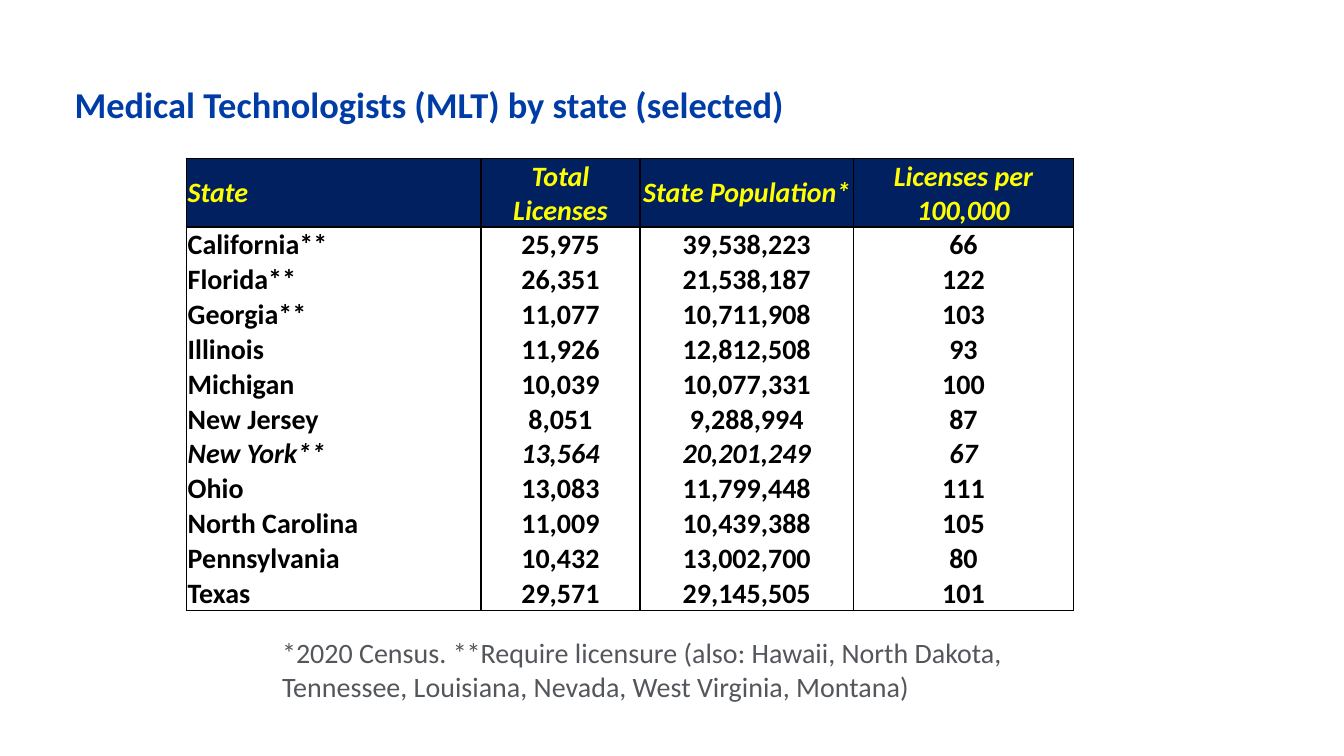
from dataclasses import dataclass

from lxml import etree
from pptx import Presentation
from pptx import util as u
from pptx.dml.color import RGBColor
from pptx.enum import text
from pptx.oxml import ns

COLORS = {
    "title": "003CA5",
    "note": "53565A",
    "header_fill": "002060",
    "header_text": "FFFF00",
    "body_fill": "FFFFFF",
    "body_text": "000000",
    "border": "000000",
}
FONT = "Calibri"
COLUMN_WIDTHS = (7.42, 4.01, 5.38, 5.54)
HEADER_HEIGHT = 1.73
BODY_HEIGHT = 0.87
FRAME_FORMAT = {"margin_left": 0, "margin_top": 0, "margin_right": 0, "margin_bottom": 0,
                "word_wrap": True, "auto_size": text.MSO_AUTO_SIZE.NONE,
                "vertical_anchor": text.MSO_ANCHOR.TOP}
CELL_FORMAT = {"margin_left": u.Cm(0.03), "margin_top": u.Cm(0.03), "margin_right": u.Cm(0.03),
               "margin_bottom": 0, "vertical_anchor": text.MSO_ANCHOR.MIDDLE}


@dataclass(frozen=True)
class StateRow:
    state: str
    licenses: str
    population: str
    rate: str
    italic: bool = False

    def values(self) -> tuple[str, ...]:
        return self.state, self.licenses, self.population, self.rate


HEADER = StateRow("State", "Total Licenses", "State Population*", "Licenses per 100,000", True)
STATES = [
    StateRow("California**", "25,975", "39,538,223", "66"),
    StateRow("Florida**", "26,351", "21,538,187", "122"),
    StateRow("Georgia**", "11,077", "10,711,908", "103"),
    StateRow("Illinois", "11,926", "12,812,508", "93"),
    StateRow("Michigan", "10,039", "10,077,331", "100"),
    StateRow("New Jersey", "8,051", "9,288,994", "87"),
    StateRow("New York**", "13,564", "20,201,249", "67", True),
    StateRow("Ohio", "13,083", "11,799,448", "111"),
    StateRow("North Carolina", "11,009", "10,439,388", "105"),
    StateRow("Pennsylvania", "10,432", "13,002,700", "80"),
    StateRow("Texas", "29,571", "29,145,505", "101"),
]


def apply_format(target, values: dict) -> None:
    for name, value in values.items():
        setattr(target, name, value)


def write(frame, words: str, color: str, size: float, bold: bool = False,
          italic: bool = False, align=text.PP_ALIGN.LEFT) -> None:
    para = frame.paragraphs[0]
    para.alignment = align
    span = para.add_run()
    span.text = words
    apply_format(span.font, {"name": FONT, "size": u.Pt(size), "bold": bold, "italic": italic})
    span.font.color.rgb = RGBColor.from_string(COLORS[color])


def draw_borders(cell, visible: set[str]) -> None:
    properties = cell._tc.get_or_add_tcPr()
    for side in "LRTB":
        line = etree.SubElement(properties, ns.qn(f"a:ln{side}"), w=str(u.Pt(1)))
        if side in visible:
            fill = etree.SubElement(line, ns.qn("a:solidFill"))
            etree.SubElement(fill, ns.qn("a:srgbClr"), val=COLORS["border"])
        else:
            etree.SubElement(line, ns.qn("a:noFill"))


def draw_table(page) -> None:
    records = [HEADER, *STATES]
    height = HEADER_HEIGHT + BODY_HEIGHT * len(STATES)
    table = page.shapes.add_table(len(records), len(COLUMN_WIDTHS), u.Cm(4.7), u.Cm(3.99),
                                  u.Cm(sum(COLUMN_WIDTHS)), u.Cm(height)).table
    for column, width in zip(table.columns, COLUMN_WIDTHS):
        column.width = u.Cm(width)
    for row_index, record in enumerate(records):
        is_header = record is HEADER
        part = "header" if is_header else "body"
        visible = set("LR")
        if row_index <= 1:
            visible.add("T")
        if is_header or record is STATES[-1]:
            visible.add("B")
        table.rows[row_index].height = u.Cm(HEADER_HEIGHT if is_header else BODY_HEIGHT)
        for column_index, value in enumerate(record.values()):
            cell = table.cell(row_index, column_index)
            apply_format(cell, CELL_FORMAT)
            draw_borders(cell, visible)
            cell.fill.solid()
            cell.fill.fore_color.rgb = RGBColor.from_string(COLORS[f"{part}_fill"])
            align = text.PP_ALIGN.CENTER if column_index else text.PP_ALIGN.LEFT
            write(cell.text_frame, value, f"{part}_text", 20, True, record.italic, align)


def main() -> None:
    deck = Presentation()
    apply_format(deck, {"slide_width": u.Cm(33.87), "slide_height": u.Cm(19.05)})
    page = deck.slides.add_slide(deck.slide_layouts[5])

    title = page.shapes.title
    apply_format(title, {"left": u.Cm(1.88), "top": u.Cm(2.08),
                         "width": u.Cm(27.03), "height": u.Cm(3)})
    apply_format(title.text_frame, FRAME_FORMAT)
    write(title.text_frame, "Medical Technologists (MLT) by state (selected)", "title", 26, True)

    note = page.shapes.add_textbox(u.Cm(6.86), u.Cm(15.9), u.Cm(21.62), u.Cm(1.96))
    note.text_frame.word_wrap = True
    write(note.text_frame, "*2020 Census. **Require licensure (also: Hawaii, North Dakota, "
          "Tennessee, Louisiana, Nevada, West Virginia, Montana)", "note", 20)

    draw_table(page)
    deck.save("out.pptx")


if __name__ == "__main__":
    main()
